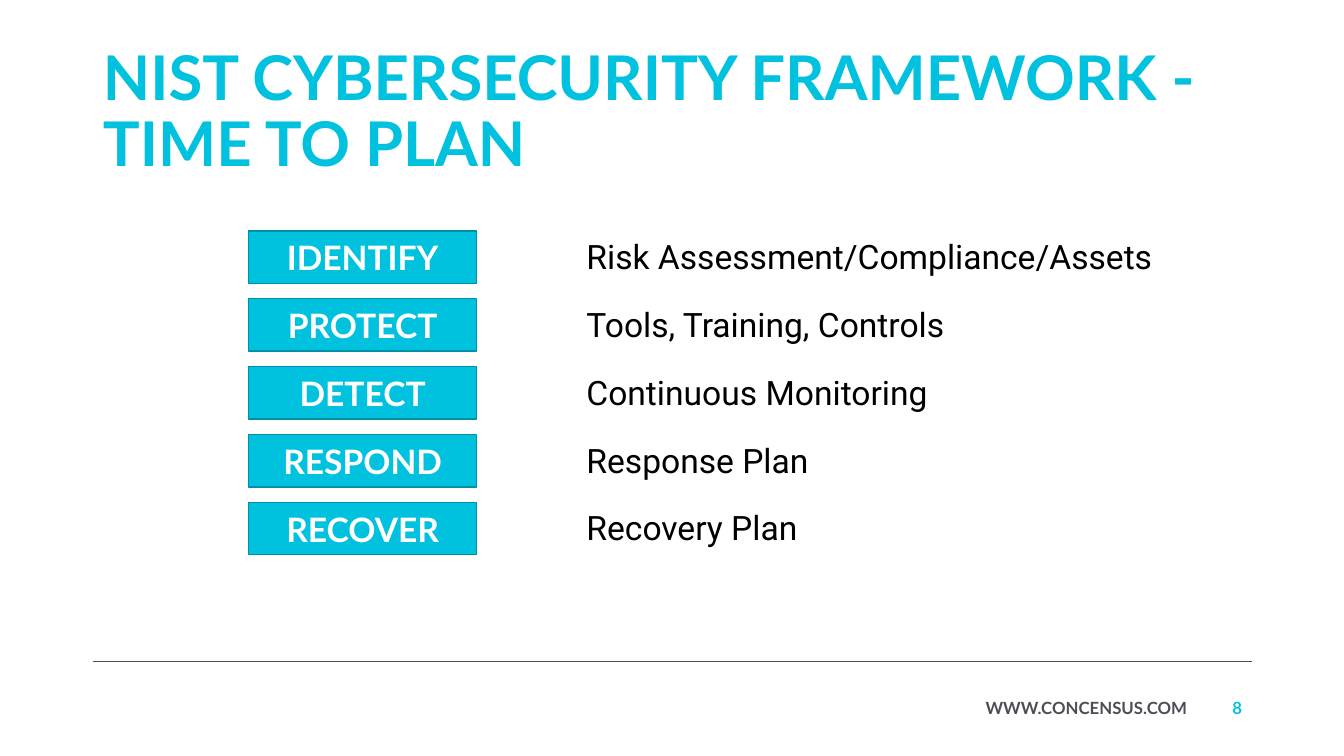
"""Build the cybersecurity framework planning slide."""
from dataclasses import dataclass

from pptx import Presentation
from pptx.dml.color import RGBColor
from pptx.enum.shapes import MSO_CONNECTOR, MSO_SHAPE
from pptx.enum.text import MSO_ANCHOR as Anchor, PP_ALIGN as Align
from pptx.oxml.ns import qn
from pptx.util import Cm, Pt
from lxml.etree import SubElement

TITLE = "NIST CYBERSECURITY FRAMEWORK - TIME TO PLAN"
FUNCTIONS = [
    ("IDENTIFY", "Risk Assessment/Compliance/Assets"),
    ("PROTECT", "Tools, Training, Controls"),
    ("DETECT", "Continuous Monitoring"),
    ("RESPOND", "Response Plan"),
    ("RECOVER", "Recovery Plan"),
]
WEBSITE = "WWW.CONCENSUS.COM"
PAGE_NUMBER = "8"


@dataclass(frozen=True)
class Theme:
    heading_font: str = "Lato"
    body_font: str = "Roboto"
    title_size: int = 44
    body_size: int = 24
    footer_size: int = 12
    accent: str = "00C1DE"
    label_fill: str = "00C2DF"
    label_line: str = "0090A5"
    gray: str = "4B4F55"
    white: str = "FFFFFF"
    black: str = "000000"


THEME = Theme()
MARGIN = 2.34
CONTENT_WIDTH = 29.21
FIRST_ROW = 5.82
ROW_PITCH = 1.71
LABEL_LEFT, LABEL_WIDTH, LABEL_HEIGHT = 6.27, 5.74, 1.32
DETAIL_LEFT, DETAIL_WIDTH, DETAIL_HEIGHT = 14.53, 16, 1.27
RULE_TOP = 16.66


def color(value):
    return RGBColor.from_string(value)


def write(shape, text, font_name, size, font_color, bold=True,
          align=Align.LEFT, anchor=Anchor.MIDDLE):
    frame = shape.text_frame
    frame.text = text
    frame.word_wrap = True
    frame.vertical_anchor = anchor
    paragraph = frame.paragraphs[0]
    paragraph.alignment = align
    font = paragraph.runs[0].font
    font.name, font.size, font.bold = font_name, Pt(size), bold
    font.color.rgb = color(font_color)
    return paragraph


def add_text(slide, box, *args, **options):
    shape = slide.shapes.add_textbox(*map(Cm, box))
    write(shape, *args, **options)


def add_title(slide):
    title = slide.shapes.title
    title.left, title.top = Cm(MARGIN), Cm(1.02)
    title.width, title.height = Cm(CONTENT_WIDTH), Cm(3.68)
    paragraph = write(title, TITLE, THEME.heading_font, THEME.title_size, THEME.accent)
    paragraph.line_spacing = 0.9


def add_function(slide, row, name, detail):
    top = FIRST_ROW + row * ROW_PITCH
    label = slide.shapes.add_shape(
        MSO_SHAPE.RECTANGLE, Cm(LABEL_LEFT), Cm(top), Cm(LABEL_WIDTH), Cm(LABEL_HEIGHT))
    label.shadow.inherit = False
    label.fill.solid()
    label.fill.fore_color.rgb = color(THEME.label_fill)
    label.line.color.rgb = color(THEME.label_line)
    label.line.width = Pt(1)
    write(label, name, THEME.heading_font, THEME.body_size, THEME.white, align=Align.CENTER)
    add_text(slide, (DETAIL_LEFT, top, DETAIL_WIDTH, DETAIL_HEIGHT), detail,
             THEME.body_font, THEME.body_size, THEME.black, bold=False, anchor=Anchor.TOP)


def add_footer(slide):
    rule = slide.shapes.add_connector(
        MSO_CONNECTOR.STRAIGHT, Cm(MARGIN), Cm(RULE_TOP),
        Cm(MARGIN + CONTENT_WIDTH), Cm(RULE_TOP))
    rule.line.color.rgb = color(THEME.gray)
    rule.line.width = Pt(0.5)
    SubElement(rule.element.spPr, qn("a:effectLst"))
    add_text(slide, (20.7, 17.45, 9.47, 0.76), WEBSITE, THEME.heading_font,
             THEME.footer_size, THEME.gray, align=Align.RIGHT, anchor=Anchor.TOP)
    add_text(slide, (30.18, 17.32, 1.37, 1.02), PAGE_NUMBER, THEME.heading_font,
             THEME.footer_size, THEME.accent, align=Align.RIGHT)


def main():
    presentation = Presentation()
    presentation.slide_width, presentation.slide_height = Cm(33.87), Cm(19.05)
    slide = presentation.slides.add_slide(presentation.slide_layouts[5])
    add_title(slide)
    for row, (name, detail) in enumerate(FUNCTIONS):
        add_function(slide, row, name, detail)
    add_footer(slide)
    presentation.save("out.pptx")


if __name__ == "__main__":
    main()
